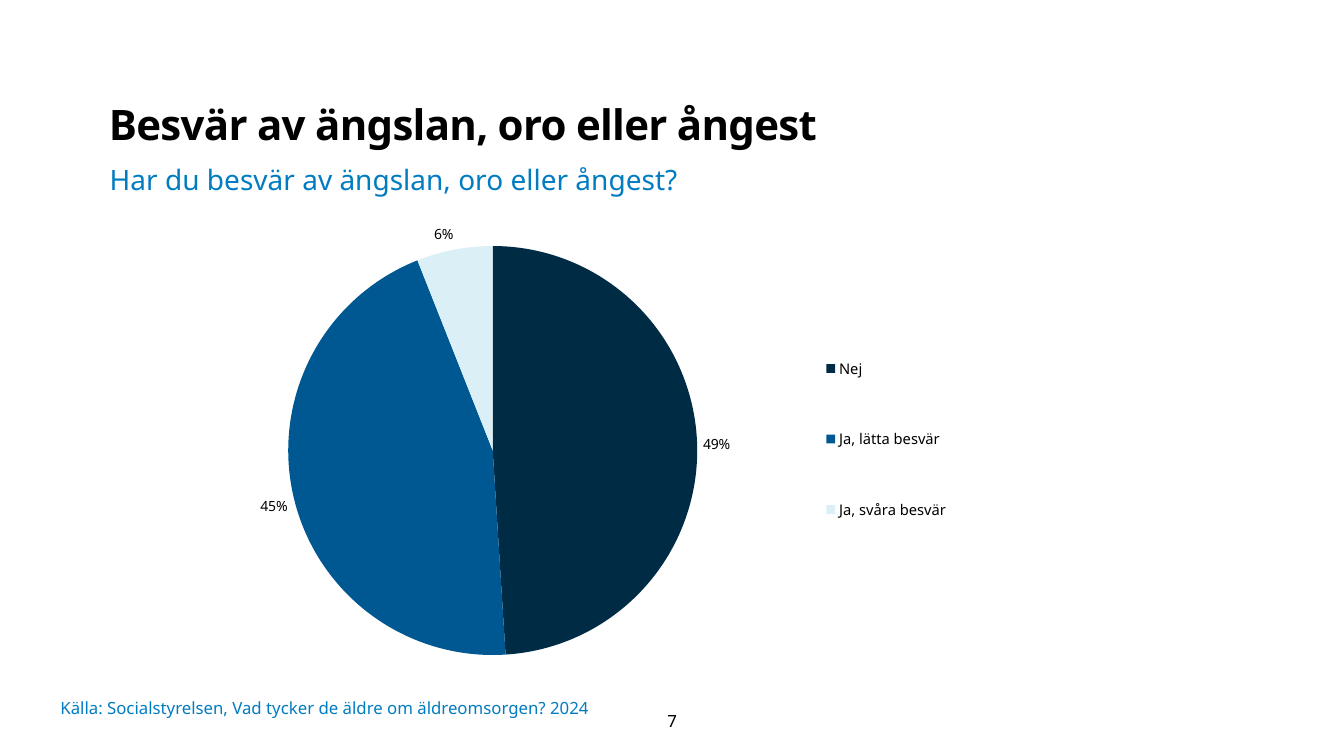
"""Build a slide with a pie chart on anxiety among older people."""
from lxml import etree
from pptx import Presentation
from pptx.chart.data import CategoryChartData
from pptx.dml.color import RGBColor
from pptx.enum.chart import XL_CHART_TYPE, XL_LABEL_POSITION, XL_LEGEND_POSITION
from pptx.enum.text import MSO_ANCHOR, PP_ALIGN
from pptx.oxml.ns import qn
from pptx.util import Pt

PIE = XL_CHART_TYPE.PIE
OUTER = XL_LABEL_POSITION.OUTSIDE_END
RIGHT = XL_LEGEND_POSITION.RIGHT
TOP, MIDDLE = MSO_ANCHOR.TOP, MSO_ANCHOR.MIDDLE
LEFT, CENTER = PP_ALIGN.LEFT, PP_ALIGN.CENTER

FONT = "Noto Sans"
COLORS = {"black": "000000", "blue": "017CC1", "navy": "002B45",
          "ocean": "005892", "ice": "DBF0F6"}
ANSWERS = [("Nej", 49, "navy"), ("Ja, lätta besvär", 45, "ocean"),
           ("Ja, svåra besvär", 6, "ice")]
PADDING = (7.2, 3.6, 7.2, 3.6)
SIDES = ("margin_left", "margin_top", "margin_right", "margin_bottom")


class Board:
    """Hold the style and the current slide."""

    def __init__(self, slide):
        self.slide = slide

    def color(self, name):
        return RGBColor.from_string(COLORS[name])

    def style(self, font, size, color="black", bold=False):
        values = {"name": FONT, "size": Pt(size), "bold": bold}
        for key, value in values.items():
            setattr(font, key, value)
        font.color.rgb = self.color(color)

    def text(self, box, words, size, color="black", bold=False, pad=PADDING,
             anchor=TOP, align=LEFT, line=None, track=None):
        frame = self.slide.shapes.add_textbox(*map(Pt, box)).text_frame
        values = {"word_wrap": True, "vertical_anchor": anchor}
        values.update(zip(SIDES, map(Pt, pad)))
        for key, value in values.items():
            setattr(frame, key, value)
        para = frame.paragraphs[0]
        para.alignment = align
        para.line_spacing = line
        run = para.add_run()
        run.text = words
        self.style(run.font, size, color, bold)
        if track:
            run._r.get_or_add_rPr().set("spc", str(track))

    def place(self, part, box, inner=False):
        layout = part.find(qn("c:layout"))
        if layout is None:
            layout = etree.Element(qn("c:layout"))
            spot = part.find(qn("c:legendPos"))
            if spot is None:
                part.insert(0, layout)
            else:
                spot.addnext(layout)
        for child in list(layout):
            layout.remove(child)
        manual = etree.SubElement(layout, qn("c:manualLayout"))
        rules = [("layoutTarget", "inner")] if inner else []
        rules += [("xMode", "edge"), ("yMode", "edge")]
        rules += zip("xywh", map(str, box))
        for tag, value in rules:
            etree.SubElement(manual, qn(f"c:{tag}")).set("val", value)

    def pie(self, box, answers, plot_box, key_box):
        names, counts, shades = zip(*answers)
        data = CategoryChartData()
        data.categories = names
        data.add_series("Series 1", counts)
        chart = self.slide.shapes.add_chart(PIE, *map(Pt, box), data).chart
        self.style(chart.font, 10)
        chart.has_title = False
        chart.has_legend = True
        legend = chart.legend
        legend.position = RIGHT
        legend.include_in_layout = False
        self.style(legend.font, 10.5)
        self.place(legend._element, key_box)
        plot = chart.plots[0]
        self.place(plot._element.getparent(), plot_box, True)
        plot.vary_by_categories = True
        plot.has_data_labels = True
        labels = plot.data_labels
        values = {"show_percentage": True, "show_value": False,
                  "number_format": "0%", "number_format_is_linked": False,
                  "position": OUTER}
        for key, value in values.items():
            setattr(labels, key, value)
        self.style(labels.font, 10)
        for index, shade in enumerate(shades):
            fill = plot.series[0].points[index].format.fill
            fill.solid()
            fill.fore_color.rgb = self.color(shade)


def main():
    deck = Presentation()
    deck.slide_width, deck.slide_height = Pt(960), Pt(540)
    board = Board(deck.slides.add_slide(deck.slide_layouts[6]))
    board.text((77.8, 67, 701, 44.6), "Besvär av ängslan, oro eller ångest",
               30, bold=True, pad=(0, 0, 7.2, 3.6), line=1.1, track=-50)
    board.text((71.3, 112.3, 645, 31.7),
               "Har du besvär av ängslan, oro eller ångest?", 20, "blue")
    board.pie((108, 157.7, 652.3, 328.3), ANSWERS,
              (0.15, 0.055, 0.448, 0.89), (0.72, 0.19, 0.17, 0.57))
    board.text((43.2, 486, 667.4, 39.6),
               "Källa: Socialstyrelsen, Vad tycker de äldre om "
               "äldreomsorgen? 2024", 12, "blue", pad=(0, 0, 0, 0),
               anchor=MIDDLE)
    board.text((443.5, 500.4, 73.4, 28.8), "7", 12,
               anchor=MIDDLE, align=CENTER)
    deck.save("out.pptx")


if __name__ == "__main__":
    main()
